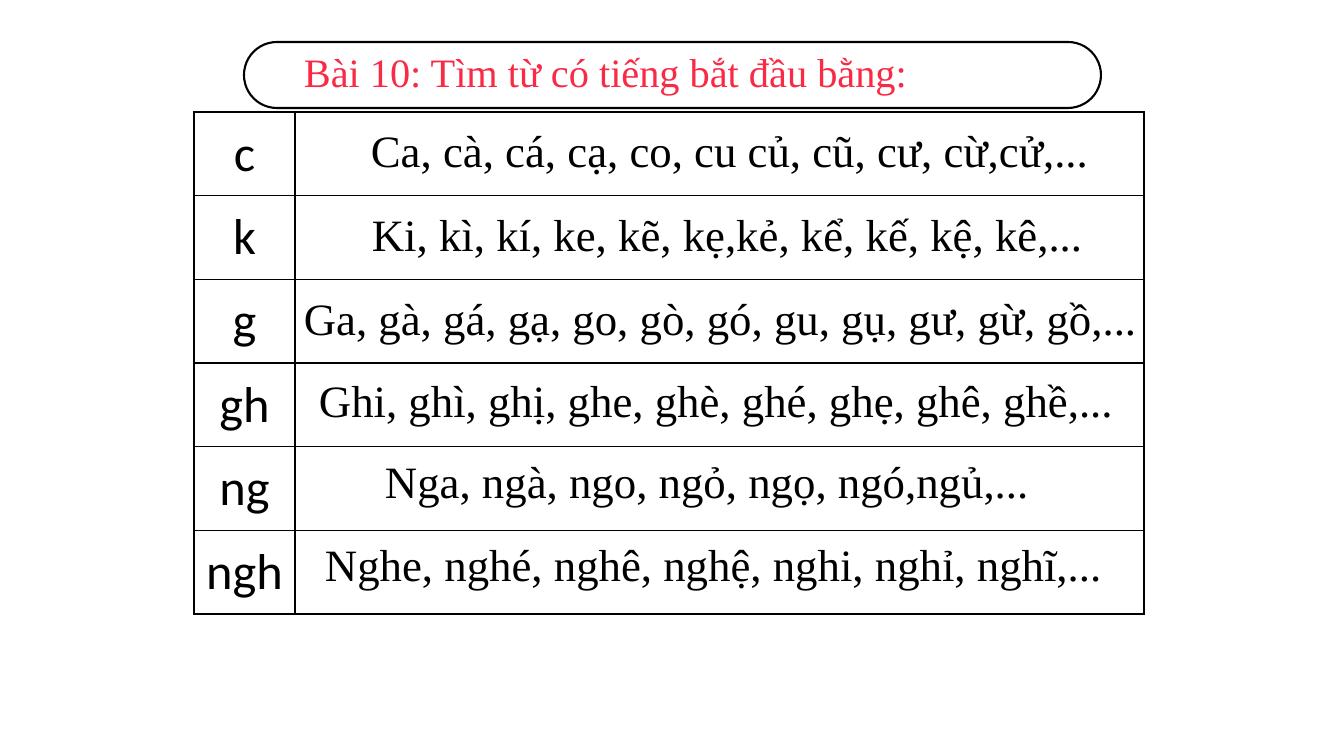
from pptx import Presentation
from pptx.dml.color import RGBColor
from pptx.enum.shapes import MSO_SHAPE
from pptx.enum.text import MSO_ANCHOR, PP_ALIGN
from pptx.oxml import parse_xml
from pptx.oxml.ns import nsdecls
from pptx.util import Pt

BLACK = RGBColor(0x00, 0x00, 0x00)
WHITE = RGBColor(0xFF, 0xFF, 0xFF)
RED = RGBColor(0xF8, 0x2A, 0x45)

TITLE = "Bài 10: Tìm từ có tiếng bắt đầu bằng:"
INITIALS = ["c", "k", "g", "gh", "ng", "ngh"]
WORD_LISTS = [
    ("Ca, cà, cá, cạ, co, cu củ, cũ, cư, cừ,cử,...", 361, 118, 768, PP_ALIGN.LEFT),
    ("Ki, kì, kí, ke, kẽ, kẹ,kẻ, kể, kế, kệ, kê,...", 362, 202, 738, PP_ALIGN.LEFT),
    ("Ga, gà, gá, gạ, go, gò, gó, gu, gụ, gư, gừ, gồ,...", 294, 286, 971, PP_ALIGN.LEFT),
    ("Ghi, ghì, ghị, ghe, ghè, ghé, ghẹ, ghê, ghề,...", 309, 368, 845, PP_ALIGN.LEFT),
    ("Nga, ngà, ngo, ngỏ, ngọ, ngó,ngủ,...", 361, 449, 692, PP_ALIGN.CENTER),
    ("Nghe, nghé, nghê, nghệ, nghi, nghỉ, nghĩ,...", 315, 532, 839, PP_ALIGN.LEFT),
]


def emu(px):
    """Turn slide pixels into EMU."""
    return round(px * 914400 / 100.8)


class LessonSlide:
    """Draw the elements of a spelling exercise on one slide."""

    serif = "Times New Roman"
    sans = "Calibri"

    def __init__(self, presentation):
        self.slide = presentation.slides.add_slide(presentation.slide_layouts[6])

    def style(self, paragraph, font_name, size, color, align):
        """Set the font and alignment of a paragraph."""
        paragraph.alignment = align
        font = paragraph.font
        font.name, font.size, font.color.rgb = font_name, Pt(size), color

    def pill(self, left, top, width, height):
        """Add an outlined shape with fully rounded ends."""
        shape = self.slide.shapes.add_shape(
            MSO_SHAPE.ROUNDED_RECTANGLE, *map(emu, (left, top, width, height)))
        shape.adjustments[0] = 0.5
        shape.shadow.inherit = False
        shape.fill.solid()
        shape.fill.fore_color.rgb = WHITE
        shape.line.color.rgb = BLACK
        shape.line.width = Pt(1.5)

    def text(self, words, left, top, width, height, size=32, color=BLACK,
             align=PP_ALIGN.LEFT, anchor=MSO_ANCHOR.TOP, line_spacing=1.0):
        """Add a wrapping text box with one serif paragraph."""
        box = self.slide.shapes.add_textbox(*map(emu, (left, top, width, height)))
        frame = box.text_frame
        frame.word_wrap = True
        frame.vertical_anchor = anchor
        paragraph = frame.paragraphs[0]
        paragraph.text = words
        paragraph.line_spacing = line_spacing
        self.style(paragraph, self.serif, size, color, align)

    def border(self, cell):
        """Give a cell a thin black line on every side."""
        properties = cell._tc.get_or_add_tcPr()
        for index, side in enumerate(("lnL", "lnR", "lnT", "lnB")):
            properties.insert(index, parse_xml(
                f'<a:{side} {nsdecls("a")} w="{Pt(1)}"><a:solidFill>'
                f'<a:srgbClr val="{BLACK}"/></a:solidFill></a:{side}>'))

    def table(self, labels, left, top, column_widths, height):
        """Add a ruled table with labels in its first column."""
        table = self.slide.shapes.add_table(
            len(labels), len(column_widths),
            *map(emu, (left, top, sum(column_widths), height))).table
        table.first_row = table.horz_banding = False
        for column, width in zip(table.columns, column_widths):
            column.width = emu(width)
        for row, label in enumerate(labels):
            cell = table.cell(row, 0)
            cell.text = label
            cell.vertical_anchor = MSO_ANCHOR.MIDDLE
            cell.margin_top = cell.margin_bottom = emu(10)
            self.style(cell.text_frame.paragraphs[0], self.sans, 36, BLACK, PP_ALIGN.CENTER)
        for cell in table.iter_cells():
            cell.fill.background()
            self.border(cell)


def main():
    """Build the exercise and save it."""
    presentation = Presentation()
    presentation.slide_width, presentation.slide_height = emu(1344), emu(756)
    lesson = LessonSlide(presentation)
    lesson.pill(244, 42, 857, 66)
    lesson.text(TITLE, 294, 52, 790, 44, size=28.8, color=RED,
                anchor=MSO_ANCHOR.MIDDLE, line_spacing=0.9)
    lesson.table(INITIALS, 194, 112, (101, 849), 502)
    for words, left, top, width, align in WORD_LISTS:
        lesson.text(words, left, top, width, 64, align=align)
    presentation.save("out.pptx")


if __name__ == "__main__":
    main()
